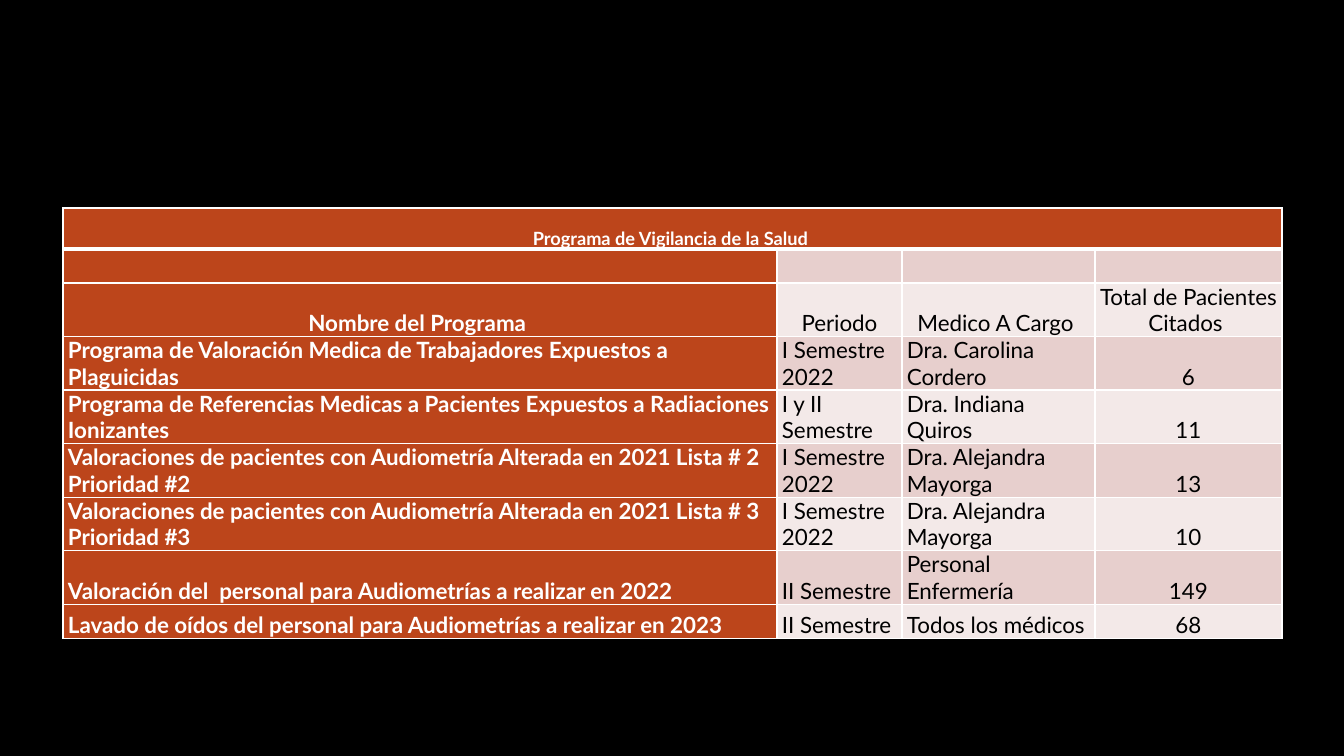
from lxml.etree import SubElement
from pptx import Presentation
from pptx.dml.color import RGBColor
from pptx.enum.text import MSO_ANCHOR, PP_ALIGN
from pptx.oxml.ns import qn
from pptx.util import Pt

EMU_PER_PX = 914400 / 100.8
COLORS = {
    "background": "000000",
    "rust": "BC451B",
    "dark_band": "E7CFCD",
    "light_band": "F3E9E8",
    "white": "FFFFFF",
    "black": "000000",
}
COL_WIDTHS = [714, 125, 193, 187]
TITLE_HEIGHT, ROW_HEIGHT = 41, 34
ROWS = [
    ["Programa de Vigilancia de la Salud ", "", "", ""],
    ["", "", "", ""],
    ["Nombre del Programa ", "Periodo", "Medico A Cargo ", "Total de Pacientes Citados "],
    ["Programa de Valoración Medica de Trabajadores Expuestos a Plaguicidas",
     "I Semestre 2022", "Dra. Carolina Cordero", "6"],
    ["Programa de Referencias Medicas a Pacientes Expuestos a Radiaciones Ionizantes",
     "I y II Semestre", "Dra. Indiana Quiros", "11"],
    ["Valoraciones de pacientes con Audiometría Alterada en 2021 Lista # 2 Prioridad #2",
     "I Semestre 2022", "Dra. Alejandra Mayorga", "13"],
    ["Valoraciones de pacientes con Audiometría Alterada en 2021 Lista # 3 Prioridad #3",
     "I Semestre 2022", "Dra. Alejandra Mayorga", "10"],
    ["Valoración del  personal para Audiometrías a realizar en 2022",
     "II Semestre", "Personal Enfermería", "149"],
    ["Lavado de oídos del personal para Audiometrías a realizar en 2023",
     "II Semestre", "Todos los médicos", "68"],
]


def px(n):
    return round(n * EMU_PER_PX)


def add_borders(cell, row):
    """White 1 pt edges, with a 3 pt rule below the title row."""
    tc_pr = cell._tc.get_or_add_tcPr()
    for side in ("L", "R", "T", "B"):
        under_title = (row, side) in ((0, "B"), (1, "T"))
        ln = SubElement(tc_pr, qn(f"a:ln{side}"), w=str(Pt(3 if under_title else 1)))
        fill = SubElement(ln, qn("a:solidFill"))
        SubElement(fill, qn("a:srgbClr"), val=COLORS["white"])


prs = Presentation()
prs.slide_width, prs.slide_height = px(1344), px(756)
slide = prs.slides.add_slide(prs.slide_layouts[6])
slide.background.fill.solid()
slide.background.fill.fore_color.rgb = RGBColor.from_string(COLORS["background"])

table_height = TITLE_HEIGHT + ROW_HEIGHT * (len(ROWS) - 1)
table = slide.shapes.add_table(
    len(ROWS), len(COL_WIDTHS), px(63), px(208), px(sum(COL_WIDTHS)), px(table_height)
).table
for column, width in zip(table.columns, COL_WIDTHS):
    column.width = px(width)

for r, texts in enumerate(ROWS):
    table.rows[r].height = px(ROW_HEIGHT if r else TITLE_HEIGHT)
    for c, text in enumerate(texts):
        cell = table.cell(r, c)
        strong = r == 0 or c == 0
        band = "dark_band" if r % 2 else "light_band"
        add_borders(cell, r)
        cell.fill.solid()
        cell.fill.fore_color.rgb = RGBColor.from_string(COLORS["rust" if strong else band])
        cell.vertical_anchor = MSO_ANCHOR.BOTTOM
        cell.margin_left = cell.margin_right = px(5)
        cell.margin_top = cell.margin_bottom = 0
        cell.text = text
        p = cell.text_frame.paragraphs[0]
        p.alignment = PP_ALIGN.CENTER if r < 3 or c == 3 else PP_ALIGN.LEFT
        p.font.name = "Lato"
        p.font.size = Pt(16 if r else 13)
        p.font.bold = strong
        p.font.color.rgb = RGBColor.from_string(COLORS["white" if strong else "black"])

table.cell(0, 0).merge(table.cell(0, 3))

prs.save("out.pptx")
